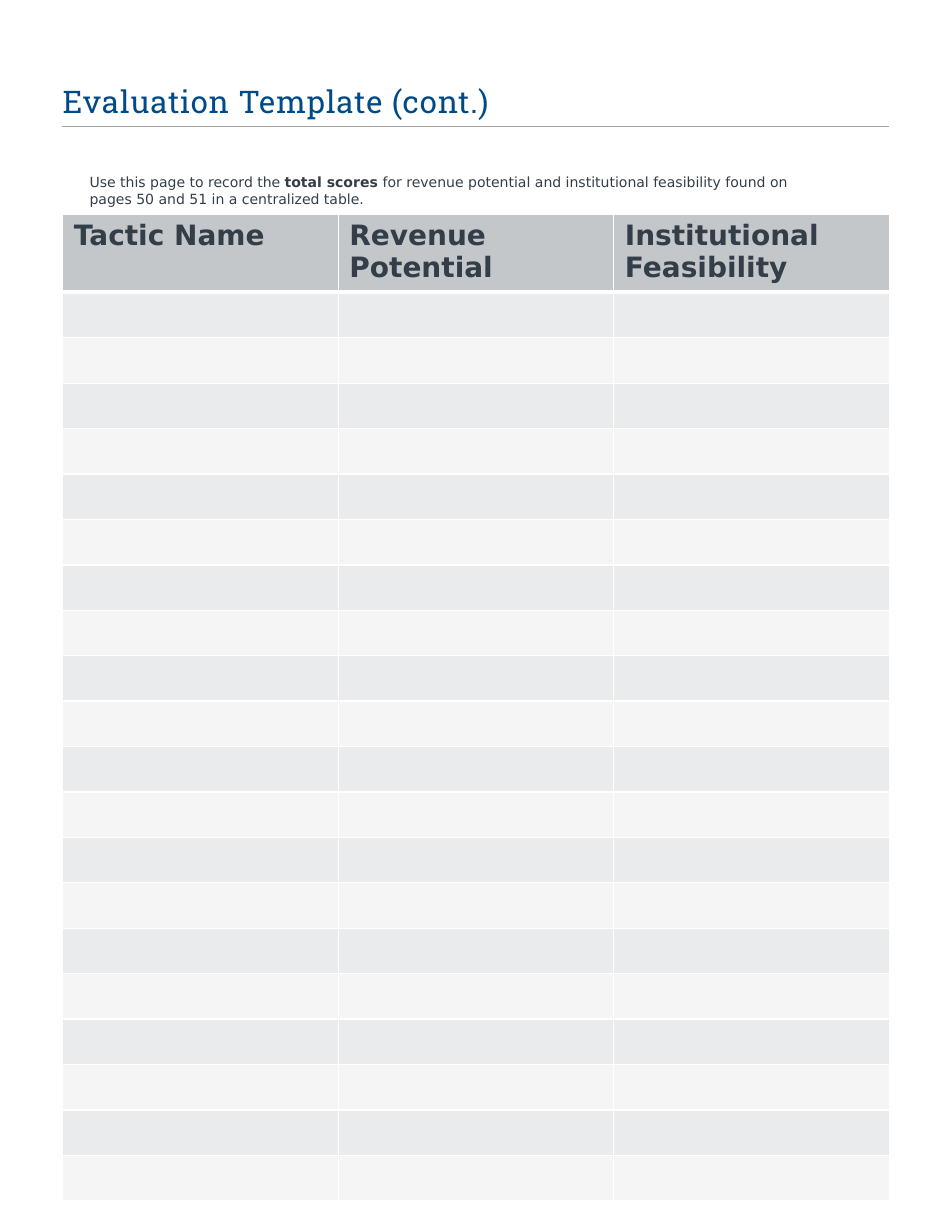
import lxml.etree
import pptx
import pptx.dml.color
import pptx.enum.shapes
import pptx.enum.text
import pptx.oxml.ns
import pptx.util

Inches = pptx.util.Inches
Pt = pptx.util.Pt
qn = pptx.oxml.ns.qn

HEADINGS = ["Tactic Name", "Revenue Potential", "Institutional Feasibility"]
BLANK_ROWS = 20
BODY_FONT = "DejaVu Sans"
BODY_COLOR = "333E48"


def color(value):
    return pptx.dml.color.RGBColor.from_string(value)


def add_run(paragraph, text, size, font, hex_color, bold=False):
    run = paragraph.add_run()
    run.text = text
    run.font.size = Pt(size)
    run.font.name = font
    run.font.bold = bold
    run.font.color.rgb = color(hex_color)
    return run


presentation = pptx.Presentation()
presentation.slide_width = Inches(8.5)
presentation.slide_height = Inches(11)
slide = presentation.slides.add_slide(presentation.slide_layouts[6])

# Rule under the title
rule = slide.shapes.add_connector(
    pptx.enum.shapes.MSO_CONNECTOR.STRAIGHT,
    Inches(0.55), Inches(1.13), Inches(7.94), Inches(1.13))
rule.line.color.rgb = color("9DA2A7")
rule.line.width = Pt(1)
lxml.etree.SubElement(rule._element.spPr, qn("a:effectLst"))

# Title and instructions
title = slide.shapes.add_textbox(Inches(0.56), Inches(0.77), Inches(7.39), Inches(0.3))
instructions = slide.shapes.add_textbox(Inches(0.8), Inches(1.55), Inches(6.5), Inches(0.3))
for shape in (title, instructions):
    frame = shape.text_frame
    frame.word_wrap = True
    frame.margin_left = frame.margin_top = frame.margin_right = frame.margin_bottom = 0

title.text_frame.vertical_anchor = pptx.enum.text.MSO_ANCHOR.BOTTOM
paragraph = title.text_frame.paragraphs[0]
paragraph.line_spacing = 0.9
run = add_run(paragraph, "Evaluation Template (cont.)", 20, "Roboto Slab", "004B87")
run.font._element.set("spc", "50")

paragraph = instructions.text_frame.paragraphs[0]
paragraph.space_before = Pt(5)
for text, bold in [
    ("Use this page to record the ", False),
    ("total scores ", True),
    ("for revenue potential and institutional feasibility found on "
     "pages 50 and 51 in a centralized table.", False),
]:
    add_run(paragraph, text, 9, BODY_FONT, BODY_COLOR, bold)

# Score table
table = slide.shapes.add_table(
    BLANK_ROWS + 1, len(HEADINGS),
    Inches(0.56), Inches(1.91), Inches(7.38), Inches(8.52)).table

for row_index, row in enumerate(table.rows):
    is_header = row_index == 0
    if is_header:
        fill = "C4C7CA"
    else:
        fill = "EAEBEC" if row_index % 2 else "F5F5F6"
    for column_index, cell in enumerate(row.cells):
        cell.fill.solid()
        cell.fill.fore_color.rgb = color(fill)
        if is_header:
            add_run(cell.text_frame.paragraphs[0], HEADINGS[column_index],
                    18, BODY_FONT, BODY_COLOR, True)

        # White borders, thicker between the header and the first row
        properties = cell._tc.get_or_add_tcPr()
        for position, side in enumerate(["lnL", "lnR", "lnT", "lnB"]):
            thick = (row_index, side) in [(0, "lnB"), (1, "lnT")]
            border = lxml.etree.Element(qn("a:" + side), w=str(Pt(3 if thick else 1)))
            border_fill = lxml.etree.SubElement(border, qn("a:solidFill"))
            lxml.etree.SubElement(border_fill, qn("a:srgbClr"), val="FFFFFF")
            properties.insert(position, border)

presentation.save("out.pptx")
